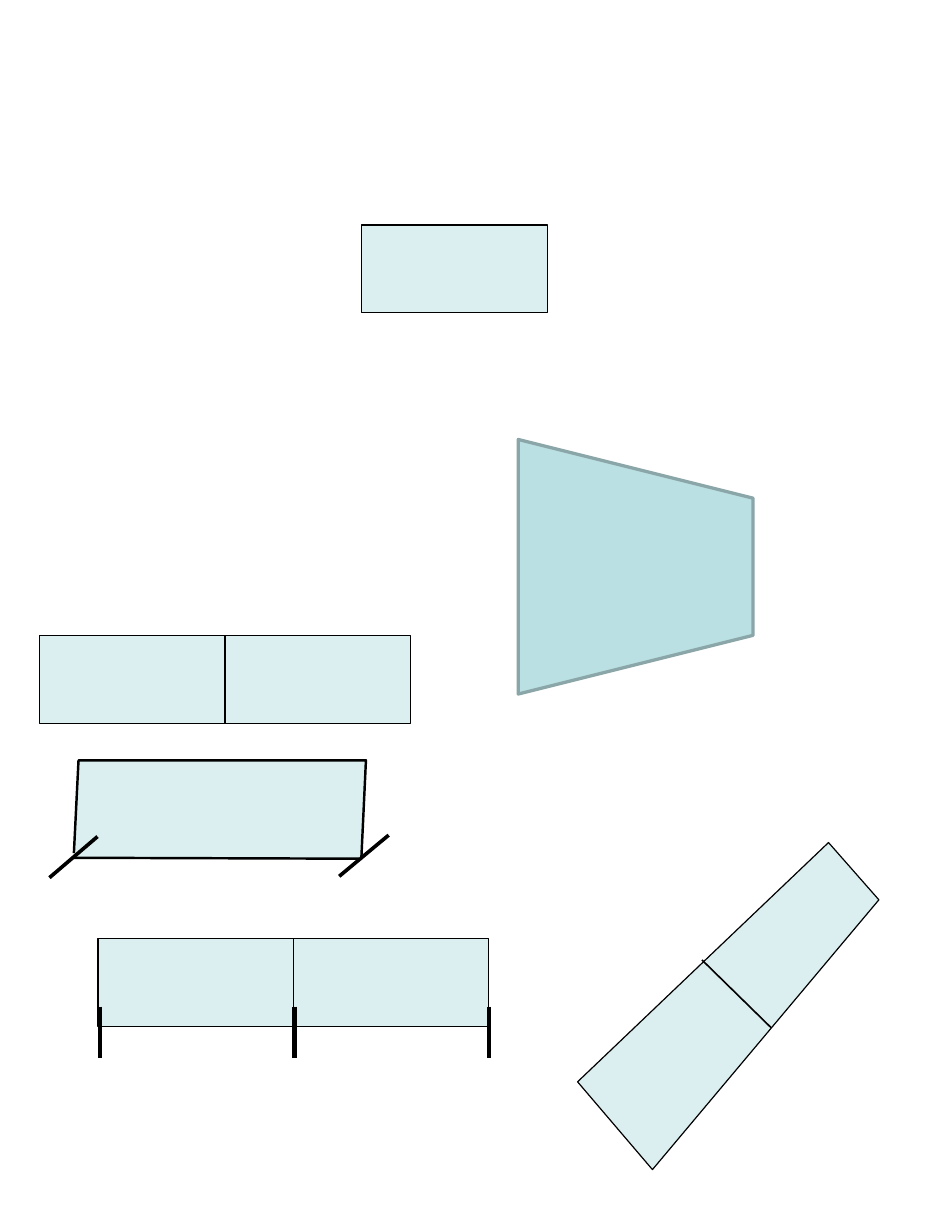
from lxml.etree import SubElement
from pptx import Presentation
from pptx.dml.color import RGBColor
from pptx.enum.shapes import MSO_CONNECTOR as Connector, MSO_SHAPE as Preset
from pptx.oxml.ns import qn
from pptx.util import Cm, Pt


def color(value):
    return RGBColor.from_string(value)


class Sketch:
    """Draws tinted panels and black strokes, in centimetres, on one page."""

    tint = "BBE0E3"
    ink = "000000"

    def __init__(self, page):
        self.page = page

    def paint(self, shape, ink, weight, alpha=None):
        shape.shadow.inherit = False
        shape.fill.solid()
        shape.fill.fore_color.rgb = color(self.tint)
        if alpha is not None:
            tone = shape.fill._xPr.find(qn("a:solidFill"))[0]
            SubElement(tone, qn("a:alpha"), val=str(alpha * 1000))
        shape.line.color.rgb = color(ink)
        shape.line.width = Pt(weight)

    def panel(self, left, top, width, height):
        shape = self.page.shapes.add_shape(
            Preset.RECTANGLE, Cm(left), Cm(top), Cm(width), Cm(height))
        self.paint(shape, self.ink, 0.75, alpha=50)

    def outline(self, points, weight, close=True):
        start, *rest = [(Cm(x), Cm(y)) for x, y in points]
        builder = self.page.shapes.build_freeform(*start)
        builder.add_line_segments(rest, close=close)
        self.paint(builder.convert_to_shape(), self.ink, weight, alpha=50)

    def trapezoid(self, left, top, width, height, rotation):
        shape = self.page.shapes.add_shape(
            Preset.TRAPEZOID, Cm(left), Cm(top), Cm(width), Cm(height))
        shape.rotation = rotation
        self.paint(shape, "8AA6A8", 2)

    def stroke(self, x1, y1, x2, y2, weight=2.25):
        line = self.page.shapes.add_connector(
            Connector.STRAIGHT, Cm(x1), Cm(y1), Cm(x2), Cm(y2))
        line.line.color.rgb = color(self.ink)
        line.line.width = Pt(weight)
        SubElement(line._element.spPr, qn("a:effectLst"))


def main():
    deck = Presentation()
    deck.slide_width, deck.slide_height = Cm(20.32), Cm(26.67)
    sketch = Sketch(deck.slides.add_slide(deck.slide_layouts[6]))

    panel_height = 1.9
    bay = 4.23
    for left in (6.35, 2.12):
        sketch.panel(left, 20.32, bay, panel_height)
        for x in (left + 0.04, left + bay):
            sketch.stroke(x, 21.79, x, 22.91)

    sketch.stroke(8.41, 18.08, 7.34, 18.97)
    sketch.outline([(1.6, 18.47), (1.7, 16.46), (7.92, 16.46),
                    (7.82, 18.59), (1.6, 18.57)], 1.5, close=False)
    sketch.stroke(2.11, 18.11, 1.07, 19)

    panel_width = 4.02
    for left, top in ((4.87, 13.76), (0.85, 13.76), (7.83, 4.87)):
        sketch.panel(left, top, panel_width, panel_height)

    sketch.outline([(19.02, 19.48), (14.12, 25.32),
                    (12.5, 23.42), (17.93, 18.24)], 0.75)
    sketch.stroke(15.19, 20.78, 16.69, 22.25, weight=1)

    sketch.trapezoid(11, 9.73, 5.51, 5.08, rotation=90)
    deck.save("out.pptx")


if __name__ == "__main__":
    main()
